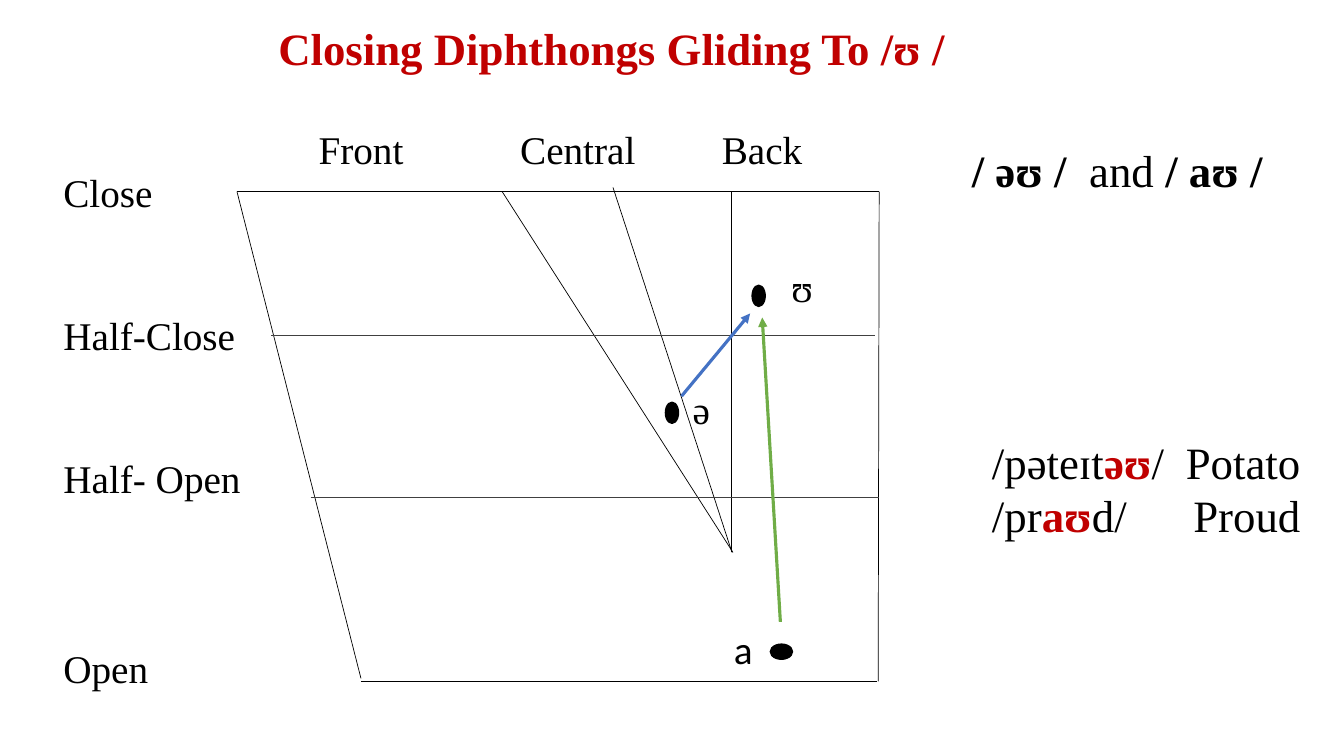
"""Build a vowel chart slide for the closing diphthongs that glide to /ʊ/."""
import pptx
import pptx.dml.color
import pptx.enum.shapes
import pptx.enum.text
import pptx.oxml
import pptx.oxml.ns
import pptx.util
from pptx.util import Inches

SERIF = "Times New Roman"
BLACK, RED, GRAY = "000000", "C00000", "404040"
BLUE, GREEN = "4472C4", "70AD47"

TITLE = [[("Closing Diphthongs Gliding To /ʊ /", RED, True)]]
COLUMNS = [[("Front\tCentral\tBack", BLACK, False)]]
ROWS = [("Close", 0), ("Half-Close", 2), ("Half- Open", 2), ("Open", 3)]
BLANK_LINE = 34.2
DIPHTHONGS = [[("/ əʊ /  ", BLACK, True), ("and ", BLACK, False),
               ("/ aʊ /", BLACK, True)]]
EXAMPLES = [
    [("/pəteɪt", BLACK, False), ("əʊ", RED, True), ("/\tPotato", BLACK, False)],
    [("/pr", BLACK, False), ("aʊ", RED, True), ("d/\tProud", BLACK, False)],
]
FRAME_LINES = [
    ((2.35, 1.9), (8.72, 1.9), BLACK),
    ((8.72, 1.9), (8.71, 6.76), BLACK),
    ((2.35, 1.9), (3.58, 6.73), BLACK),
    ((3.58, 6.76), (8.7, 6.76), BLACK),
    ((7.25, 1.9), (7.25, 5.48), BLACK),
    ((4.98, 1.9), (7.27, 5.48), BLACK),
    ((6.08, 1.86), (7.26, 5.48), BLACK),
    ((2.69, 3.33), (8.68, 3.33), GRAY),
    ((3.08, 4.93), (8.72, 4.93), GRAY),
]
GLIDES = [
    ((6.76, 3.93), (7.44, 3.11), BLUE),
    ((7.74, 6.17), (7.56, 3.15), GREEN),
]
VOWELS = [
    ("ə", SERIF, (6.77, 3.77, 0.31, 0.57), (6.6, 3.99, 0.13, 0.21)),
    ("ʊ", SERIF, (7.75, 2.56, 0.37, 0.57), (7.46, 2.83, 0.13, 0.21)),
    ("a", "Calibri", (7.18, 6.15, 0.54, 0.57), (7.64, 6.39, 0.22, 0.15)),
]


def color(value):
    return pptx.dml.color.RGBColor.from_string(value)


def write(box, paragraphs, size, font=SERIF):
    frame = box.text_frame
    frame.word_wrap = True
    frame.auto_size = pptx.enum.text.MSO_AUTO_SIZE.NONE
    frame.vertical_anchor = pptx.enum.text.MSO_ANCHOR.TOP
    for index, spans in enumerate(paragraphs):
        para = frame.paragraphs[0] if index == 0 else frame.add_paragraph()
        para.alignment = pptx.enum.text.PP_ALIGN.LEFT
        for text, tint, bold in spans:
            span = para.add_run()
            span.text = text
            span.font.name = font
            span.font.size = pptx.util.Pt(size)
            span.font.bold = bold
            span.font.color.rgb = color(tint)
    return frame


def add_text(page, place, paragraphs, size, font=SERIF):
    box = page.shapes.add_textbox(*map(Inches, place))
    return write(box, paragraphs, size, font)


def add_tabs(frame, stops, align):
    for para in frame.paragraphs:
        properties = para._p.get_or_add_pPr()
        tabs = pptx.oxml.parse_xml(
            f'<a:tabLst {pptx.oxml.ns.nsdecls("a")}>'
            + "".join(f'<a:tab pos="{Inches(stop)}" algn="{align}"/>' for stop in stops)
            + "</a:tabLst>")
        properties.append(tabs)


def add_line(page, start, end, tint, width, arrow=False):
    line = page.shapes.add_connector(
        pptx.enum.shapes.MSO_CONNECTOR.STRAIGHT, *map(Inches, start + end))
    line.line.color.rgb = color(tint)
    line.line.width = pptx.util.Pt(width)
    namespace = pptx.oxml.ns.nsdecls("a")
    if arrow:
        line.line._get_or_add_ln().append(
            pptx.oxml.parse_xml(f'<a:tailEnd {namespace} type="triangle"/>'))
    line._element.spPr.append(pptx.oxml.parse_xml(f"<a:effectLst {namespace}/>"))


def add_dot(page, place):
    dot = page.shapes.add_shape(
        pptx.enum.shapes.MSO_SHAPE.OVAL, *map(Inches, place))
    dot.shadow.inherit = False
    dot.fill.solid()
    dot.fill.fore_color.rgb = color(BLACK)
    dot.line.color.rgb = color(BLACK)
    dot.line.width = pptx.util.Pt(1)


def main():
    deck = pptx.Presentation()
    deck.slide_width, deck.slide_height = Inches(13.33), Inches(7.5)
    page = deck.slides.add_slide(deck.slide_layouts[5])

    title = page.shapes.title
    title.left, title.top = Inches(2.66), Inches(0.16)
    title.width, title.height = Inches(10.45), Inches(0.64)
    write(title, TITLE, 32)

    for start, end, tint in FRAME_LINES:
        add_line(page, start, end, tint, 0.5)
    for start, end, tint in GLIDES:
        add_line(page, start, end, tint, 2.25, arrow=True)
    for symbol, font, label_place, dot_place in VOWELS:
        add_dot(page, dot_place)
        add_text(page, label_place, [[(symbol, BLACK, False)]], 28, font)

    columns = add_text(page, (2.38, 1.19, 6.33, 0.57), COLUMNS, 28)
    columns.margin_left = Inches(0.78)
    add_tabs(columns, (2, 4), "l")

    rows = add_text(page, (0.53, 1.62, 3.45, 5.28),
                    [[(label, BLACK, False)] for label, _ in ROWS], 28)
    for para, (_, gap) in zip(rows.paragraphs, ROWS):
        para.space_before = pptx.util.Pt(gap * BLANK_LINE)

    add_text(page, (9.54, 1.37, 3.25, 0.64), DIPHTHONGS, 32)
    examples = add_text(page, (9.74, 4.26, 3.37, 1.18), EXAMPLES, 32)
    add_tabs(examples, (3.06,), "r")

    deck.save("out.pptx")


if __name__ == "__main__":
    main()
